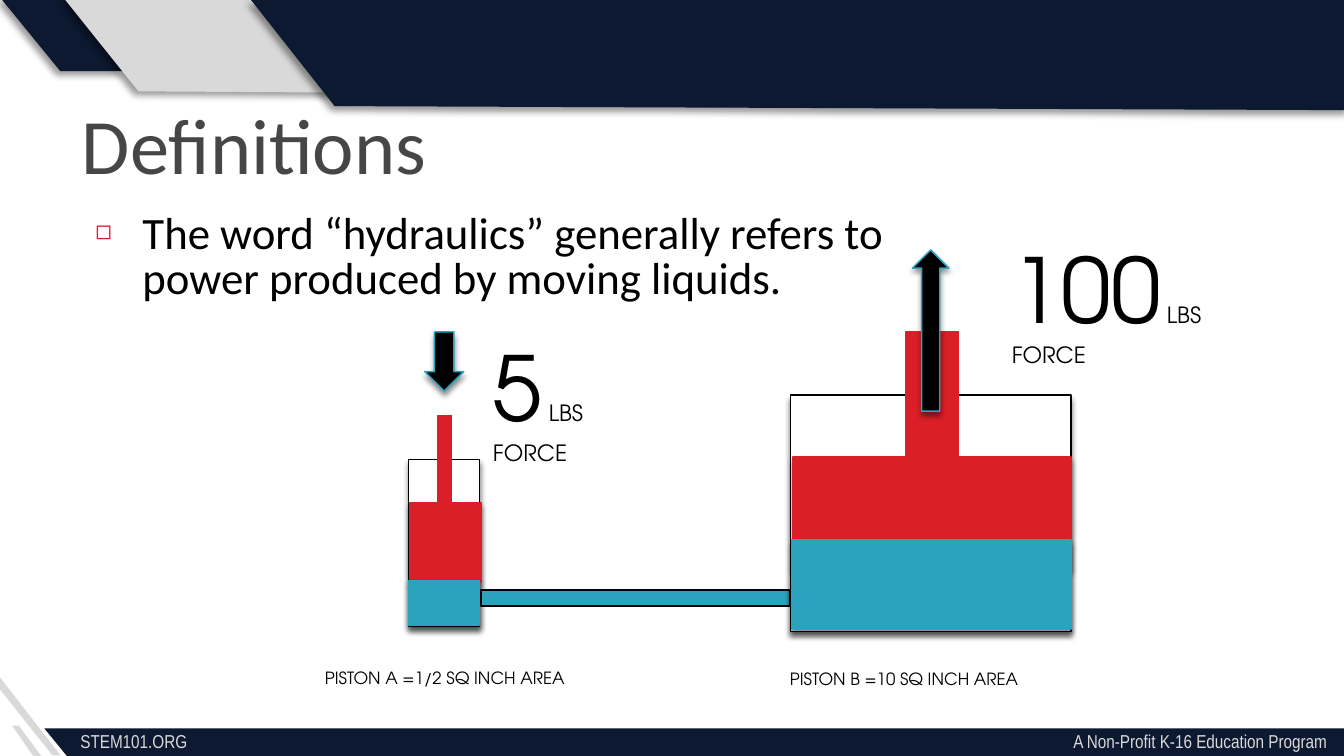
"""Build the hydraulics definition slide with its two-piston diagram."""

import dataclasses
import typing

import lxml.etree
import pptx
import pptx.dml.color
import pptx.enum.shapes
import pptx.enum.text
import pptx.oxml.ns
import pptx.util

CELL = pptx.util.Inches(0.1)
COLUMNS, ROWS = 100, 56.25
RECTANGLE = pptx.enum.shapes.MSO_SHAPE.RECTANGLE
ARROW = pptx.enum.shapes.MSO_SHAPE.UP_ARROW
LEFT = pptx.enum.text.PP_ALIGN.LEFT
RIGHT = pptx.enum.text.PP_ALIGN.RIGHT


@dataclasses.dataclass(frozen=True)
class Theme:
    navy: str = "0C1930"
    gray: str = "D9D9D9"
    heading: str = "464646"
    black: str = "000000"
    white: str = "FFFFFF"
    red: str = "DA1F28"
    blue: str = "2DA2BF"
    text_font: str = "Calibri"
    footer_font: str = "Arial Narrow"
    label_font: str = "TeX Gyre Adventor"
    title_size: float = 42
    body_size: float = 24
    number_size: float = 48
    unit_size: float = 12
    caption_size: float = 9
    footer_size: float = 10
    outline: float = 0.79


THEME = Theme()


class Area(typing.NamedTuple):
    left: float
    top: float
    width: float
    height: float


class Shadow(typing.NamedTuple):
    opacity: int
    blur: float
    distance: float
    angle: int


class Band(typing.NamedTuple):
    points: tuple[tuple[float, float], ...]
    fill: str
    shadow: Shadow | None = None


class Block(typing.NamedTuple):
    area: Area
    fill: str
    line: str
    shadow: Shadow | None = None
    kind: typing.Any = RECTANGLE
    turn: int = 0


class Label(typing.NamedTuple):
    area: Area
    lines: tuple[str, ...]
    size: float
    font: str = THEME.label_font
    color: str = THEME.black
    align: typing.Any = LEFT
    number: str = ""


BAND_SHADOW = Shadow(40, 4, 3, 135)
BLOCK_SHADOW = Shadow(45, 3, 2.4, 90)

BANDS = (
    Band(((4.5, 5.3), (0, -0.2), (4.8, -0.2), (9.3, 5.3)), THEME.navy, BAND_SHADOW),
    Band(((10.3, 6.8), (4.7, -0.2), (20.4, -0.2), (25.9, 6.9)), THEME.gray, BAND_SHADOW),
    Band(((3.1, 56.3), (2.5, 56.3), (0.9, 54), (1.4, 54)), THEME.gray),
    Band(((4.5, 56.2), (3.9, 56.2), (0, 51.3), (0, 50.4)), THEME.gray),
    Band(((24.9, 7.9), (18.6, -0.1), (100.2, -0.1), (100.4, 8.2)), THEME.navy, BAND_SHADOW),
    Band(((100.6, 56.5), (5.1, 56.4), (3.3, 54.2), (100.7, 54.2)), THEME.navy),
)

PISTON_A = (
    Block(Area(30.4, 34.2, 5.3, 12.4), THEME.white, THEME.black, BLOCK_SHADOW),
    Block(Area(30.5, 37.4, 5.3, 5.9), THEME.red, THEME.red, BLOCK_SHADOW),
    Block(Area(30.4, 43.2, 5.3, 3.3), THEME.blue, THEME.blue, BLOCK_SHADOW),
    Block(Area(32.6, 30.9, 1, 7.5), THEME.red, THEME.red),
)

PIPE_AND_PISTON_B = (
    Block(Area(35.8, 43.9, 23, 1.2), THEME.blue, THEME.black),
    Block(Area(58.8, 29.4, 20.9, 17.6), THEME.white, THEME.black, BLOCK_SHADOW),
    Block(Area(59, 34, 20.7, 8.3), THEME.red, THEME.red, BLOCK_SHADOW),
    Block(Area(58.9, 40.2, 20.8, 6.6), THEME.blue, THEME.blue, BLOCK_SHADOW),
    Block(Area(67.4, 24.7, 3.9, 10.6), THEME.red, THEME.red),
)

ARROWS = (
    Block(Area(31.6, 24.7, 2.9, 4.4), THEME.black, THEME.blue, BLOCK_SHADOW, ARROW, 180),
    Block(Area(67.9, 18.6, 2.7, 12), THEME.black, THEME.blue, BLOCK_SHADOW, ARROW),
)

FOOTER_STYLE = (THEME.footer_size, THEME.footer_font, THEME.gray)
LABELS = (
    Label(Area(5, 53.8, 30, 2.7), ("STEM101.ORG",), *FOOTER_STYLE),
    Label(Area(59.7, 53.8, 40, 2.7), ("A Non-Profit K-16 Education Program",), *FOOTER_STYLE, RIGHT),
    Label(Area(35.7, 24.2, 12.3, 11.1), (" LBS", "FORCE"), THEME.unit_size, number="5"),
    Label(Area(74.3, 16.9, 22.2, 11.1), (" LBS", "FORCE"), THEME.unit_size, number="100"),
    Label(Area(23.2, 49.2, 22.3, 2.5), ("PISTON A =1/2 SQ INCH AREA",), THEME.caption_size),
    Label(Area(57.8, 49.3, 22.3, 2.5), ("PISTON B =10 SQ INCH AREA",), THEME.caption_size),
)


def cells(*values: float) -> list[int]:
    """Convert grid cells to slide units."""
    return [round(value * CELL) for value in values]


def rgb(color: str) -> pptx.dml.color.RGBColor:
    """Turn a hex string into a colour."""
    return pptx.dml.color.RGBColor.from_string(color)


def paint(shape: typing.Any, fill: str, shadow: Shadow | None) -> None:
    """Fill a shape and give it its own shadow or none."""
    shape.fill.solid()
    shape.fill.fore_color.rgb = rgb(fill)
    shape.shadow.inherit = False
    if shadow:
        effects = shape.element.spPr.find(pptx.oxml.ns.qn("a:effectLst"))
        outer = lxml.etree.SubElement(
            effects, pptx.oxml.ns.qn("a:outerShdw"), blurRad=str(pptx.util.Pt(shadow.blur)),
            dist=str(pptx.util.Pt(shadow.distance)), dir=str(shadow.angle * 60000), rotWithShape="0")
        color = lxml.etree.SubElement(outer, pptx.oxml.ns.qn("a:srgbClr"), val=THEME.black)
        lxml.etree.SubElement(color, pptx.oxml.ns.qn("a:alpha"), val=str(shadow.opacity * 1000))


def draw_band(shapes: typing.Any, band: Band) -> None:
    """Draw one slanted band of the frame."""
    start, *rest = [tuple(cells(*point)) for point in band.points]
    builder = shapes.build_freeform(*start)
    builder.add_line_segments(rest, close=True)
    shape = builder.convert_to_shape()
    paint(shape, band.fill, band.shadow)
    shape.line.fill.background()


def draw_block(shapes: typing.Any, block: Block) -> None:
    """Draw one outlined part of the diagram."""
    shape = shapes.add_shape(block.kind, *cells(*block.area))
    paint(shape, block.fill, block.shadow)
    shape.line.color.rgb = rgb(block.line)
    shape.line.width = pptx.util.Pt(THEME.outline)
    shape.rotation = block.turn


def style(para: typing.Any, size: float, font: str, color: str) -> None:
    """Set the font of a paragraph."""
    para.font.size = pptx.util.Pt(size)
    para.font.name = font
    para.font.color.rgb = rgb(color)


def draw_label(shapes: typing.Any, label: Label) -> None:
    """Draw a text box, with a large leading number if it has one."""
    frame = shapes.add_textbox(*cells(*label.area)).text_frame
    frame.word_wrap = True
    for index, line in enumerate(label.lines):
        para = frame.add_paragraph() if index else frame.paragraphs[0]
        para.alignment = label.align
        style(para, label.size, label.font, label.color)
        if label.number and index == 0:
            span = para.add_run()
            span.text = label.number
            span.font.size = pptx.util.Pt(THEME.number_size)
        para.add_run().text = line


def fill_placeholder(box: typing.Any, area: Area, text: str, spacing: float) -> typing.Any:
    """Place a template placeholder and return its paragraph."""
    box.left, box.top, box.width, box.height = cells(*area)
    frame = box.text_frame
    frame.text = text
    frame.word_wrap = True
    frame.auto_size = pptx.enum.text.MSO_AUTO_SIZE.NONE
    frame.vertical_anchor = pptx.enum.text.MSO_ANCHOR.TOP
    para = frame.paragraphs[0]
    para.alignment = LEFT
    para.line_spacing = pptx.util.Pt(spacing)
    para.space_before = pptx.util.Pt(0)
    return para


def add_bullet(para: typing.Any) -> None:
    """Give a paragraph a small red square bullet."""
    properties = para._p.get_or_add_pPr()
    indent = cells(3.5)[0]
    properties.set("marL", str(indent))
    properties.set("indent", str(-indent))
    color = lxml.etree.SubElement(properties, pptx.oxml.ns.qn("a:buClr"))
    lxml.etree.SubElement(color, pptx.oxml.ns.qn("a:srgbClr"), val=THEME.red)
    lxml.etree.SubElement(properties, pptx.oxml.ns.qn("a:buSzPct"), val="60000")
    lxml.etree.SubElement(properties, pptx.oxml.ns.qn("a:buChar"), char="◻")


def main() -> None:
    """Assemble and save the slide."""
    deck = pptx.Presentation()
    deck.slide_width, deck.slide_height = cells(COLUMNS, ROWS)
    page = deck.slides.add_slide(deck.slide_layouts[1])
    title, body = page.placeholders
    heading = fill_placeholder(title, Area(5.1, 8.1, 93.3, 8), "Definitions", 40)
    style(heading, THEME.title_size, THEME.text_font, THEME.heading)
    definition = fill_placeholder(
        body, Area(6.1, 15.4, 61.5, 11.8),
        "The word “hydraulics” generally refers to power produced by moving liquids.", 24)
    add_bullet(definition)
    style(definition, THEME.body_size, THEME.text_font, THEME.black)
    for band in BANDS:
        draw_band(page.shapes, band)
    piston = page.shapes.add_group_shape()
    for block in PISTON_A:
        draw_block(piston.shapes, block)
    for block in PIPE_AND_PISTON_B + ARROWS:
        draw_block(page.shapes, block)
    for label in LABELS:
        draw_label(page.shapes, label)
    deck.save("out.pptx")


if __name__ == "__main__":
    main()
